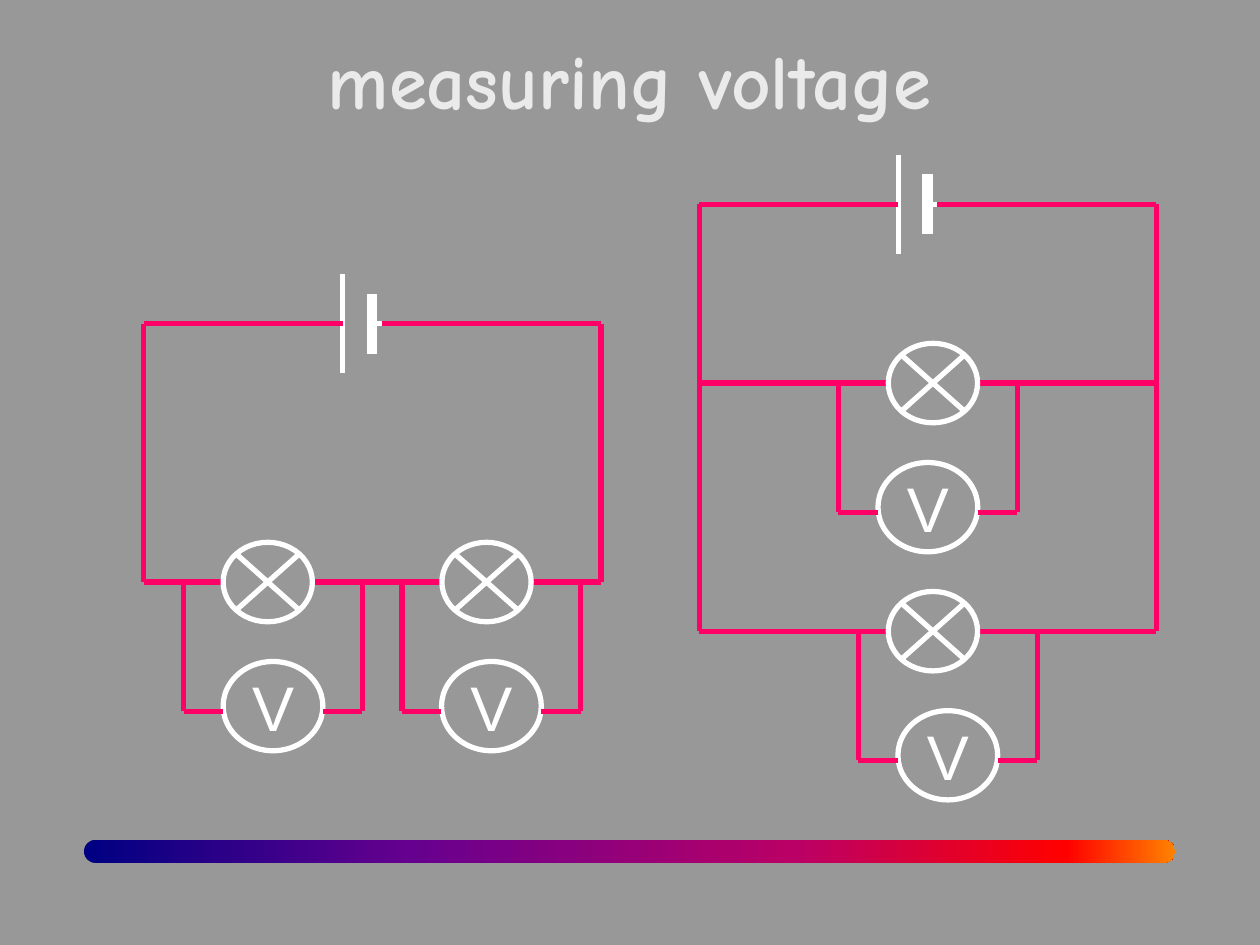
"""Build a slide of series and parallel circuits with voltmeters."""
from dataclasses import dataclass

from lxml import etree
from pptx import Presentation
from pptx.dml.color import RGBColor
from pptx.enum import shapes, text
from pptx.oxml import ns
from pptx.util import Pt


@dataclass(frozen=True)
class Theme:
    background: str = "989898"
    wire: str = "FF0066"
    symbol: str = "FFFFFF"
    title: str = "EAEAEA"
    title_font: str = "Comic Neue"
    meter_font: str = "Arial"
    title_size: int = 44
    meter_size: int = 36
    stroke: int = 3
    plate: int = 6


THEME = Theme()
TITLE = "measuring voltage"
BAR_STOPS = [(0, "000082"), (30, "66008F"), (65, "BA0066"), (90, "FF0000"), (100, "FF8200")]
CIRCUITS = [
    {"left": 82.2, "top": 185, "rails": [
        {"y": 332.6, "lamps": [127.5, 252.5], "meters": [127.5, 252.3]}]},
    {"left": 399.6, "top": 116.8, "rails": [
        {"y": 218.9, "lamps": [507.6], "meters": [501.7]},
        {"y": 360.7, "lamps": [507.6], "meters": [513.1]}]},
]
CIRCUIT_W = 261.2
LAMP_W, LAMP_H = 51, 45.4
METER_W, METER_H = 57, 51
METER_DROP, TAP_DROP, TAP_OUT = 45.4, 73.8, 22.6
LONG_X, LONG_HALF = 113.7, 28.3
SHORT_X, SHORT_HALF = 130.5, 17.1
CELL_END, LEAD_END = 136, 159


def rgb(value):
    return RGBColor.from_string(value)


def add_line(s, x1, y1, x2, y2, color=THEME.wire, width=THEME.stroke):
    line = s.shapes.add_connector(
        shapes.MSO_CONNECTOR.STRAIGHT, Pt(x1), Pt(y1), Pt(x2), Pt(y2))
    line.line.color.rgb = rgb(color)
    line.line.width = Pt(width)
    etree.SubElement(line._element.spPr, ns.qn("a:effectLst"))


def add_symbol(s, kind, x, y, w, h):
    sp = s.shapes.add_shape(kind, Pt(x), Pt(y), Pt(w), Pt(h))
    sp.shadow.inherit = False
    sp.fill.background()
    sp.line.color.rgb = rgb(THEME.symbol)
    sp.line.width = Pt(THEME.stroke)
    return sp


def write(tf, content, font, size, color, bold=False):
    p = tf.paragraphs[0]
    p.text = content
    p.alignment = text.PP_ALIGN.CENTER
    p.font.name, p.font.size, p.font.bold = font, Pt(size), bold
    p.font.color.rgb = rgb(color)


def add_bar(s):
    bar = add_symbol(s, shapes.MSO_SHAPE.ROUNDED_RECTANGLE, 48, 480, 623.5, 13)
    bar.adjustments[0] = 0.5
    bar.line.fill.background()
    bar.fill.gradient()
    bar.fill.gradient_angle = 0
    stops = bar._element.spPr.find(ns.qn("a:gradFill")).find(ns.qn("a:gsLst"))
    for stop in list(stops):
        stops.remove(stop)
    for percent, color in BAR_STOPS:
        stop = etree.SubElement(stops, ns.qn("a:gs"), pos=str(percent * 1000))
        etree.SubElement(stop, ns.qn("a:srgbClr"), val=color)


def add_title(s):
    box = s.shapes.add_textbox(Pt(0), Pt(15), Pt(720), Pt(60))
    box.text_frame.word_wrap = True
    write(box.text_frame, TITLE, THEME.title_font, THEME.title_size, THEME.title, True)


def add_meter(s, x, rail_y):
    sp = add_symbol(s, shapes.MSO_SHAPE.OVAL, x, rail_y + METER_DROP, METER_W, METER_H)
    tf = sp.text_frame
    tf.word_wrap = False
    tf.vertical_anchor = text.MSO_ANCHOR.MIDDLE
    write(tf, "V", THEME.meter_font, THEME.meter_size, THEME.symbol)
    tap_y = rail_y + TAP_DROP
    for edge, tap in ((x, x - TAP_OUT), (x + METER_W, x + METER_W + TAP_OUT)):
        add_line(s, edge, tap_y, tap, tap_y)
        add_line(s, tap, tap_y, tap, rail_y)


def add_rail(s, left, right, y, lamps, meters):
    starts = [left] + [x + LAMP_W for x in lamps]
    for start, end in zip(starts, lamps + [right]):
        add_line(s, start, y, end, y)
    for x in lamps:
        add_symbol(s, shapes.MSO_SHAPE.FLOWCHART_SUMMING_JUNCTION,
                   x, y - LAMP_H / 2, LAMP_W, LAMP_H)
    for x in meters:
        add_meter(s, x, y)


def add_circuit(s, left, top, rails):
    right, bottom = left + CIRCUIT_W, rails[-1]["y"]
    for dx, half, width in ((LONG_X, LONG_HALF, THEME.stroke), (SHORT_X, SHORT_HALF, THEME.plate)):
        add_line(s, left + dx, top - half, left + dx, top + half, THEME.symbol, width)
    add_line(s, left + SHORT_X, top, left + LEAD_END, top, THEME.symbol)
    add_line(s, left, top, left + LONG_X, top)
    add_line(s, left + CELL_END, top, right, top)
    for x in (left, right):
        add_line(s, x, top, x, bottom)
    for rail in rails:
        add_rail(s, left, right, **rail)


def main():
    prs = Presentation()
    prs.slide_width, prs.slide_height = Pt(720), Pt(540)
    s = prs.slides.add_slide(prs.slide_layouts[6])
    s.background.fill.solid()
    s.background.fill.fore_color.rgb = rgb(THEME.background)
    add_bar(s)
    add_title(s)
    for circuit in CIRCUITS:
        add_circuit(s, **circuit)
    prs.save("out.pptx")


if __name__ == "__main__":
    main()
